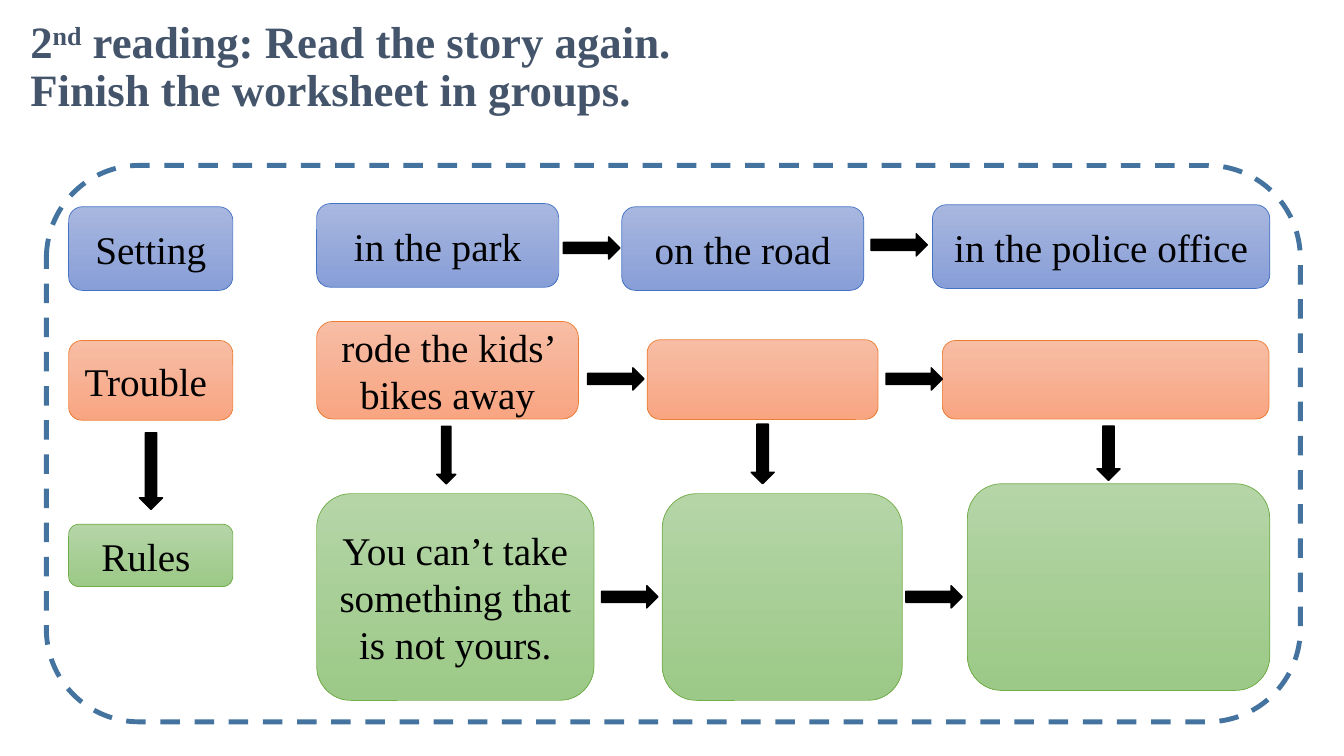
from pptx import Presentation
from pptx.dml.color import RGBColor
from pptx.enum.dml import MSO_LINE
from pptx.enum.shapes import MSO_SHAPE
from pptx.enum.text import MSO_ANCHOR, PP_ALIGN
from pptx.util import Cm, Pt

COLOURS = {
    "title": "44546A",
    "paper": "FFFFFF",
    "ink": "000000",
    "frame": "43739E",
    "setting": ("A8B7DF", "889ED7", "4472C4"),
    "trouble": ("F7BDA5", "F8A582", "ED7D31"),
    "rules": ("B5D5A7", "9CC987", "70AD47"),
}
FONT = "Times New Roman"

SETTING_CARDS = [
    ("Setting", 0, 0.08, 4.14, 2.11),
    ("in the park", 6.25, 0, 6.1, 2.11),
    ("on the road", 13.94, 0.08, 6.1, 2.11),
    ("in the police office", 21.77, 0.03, 8.5, 2.11),
]
TROUBLE_CARDS = [
    ("Trouble ", 0, 0.48, 4.14, 2.01),
    ("rode the kids’ bikes away", 6.25, 0, 6.6, 2.46),
    ("", 14.58, 0.46, 5.82, 2.01),
    ("", 22.02, 0.48, 8.23, 1.98),
]
RULES_CARDS = [
    ("Rules ", 0, 1.02, 4.14, 1.57),
    ("You can’t take something that is not yours.", 6.25, 0.25, 6.99, 5.21),
    ("", 14.96, 0.25, 6.05, 5.21),
    ("", 22.65, 0, 7.62, 5.21),
]
DOWN_ARROWS = [
    (1.11, 0.78, 1.93, 0.58),
    (8.79, 0.43, 1.45, 0.48),
    (16.74, 0.35, 1.5, 0.58),
    (25.52, 0.33, 1.37, 0.58),
]


def rgb(value):
    """Turn a hex string into a colour."""
    return RGBColor.from_string(value)


def add_outline(slide, kind, box, colour, weight):
    """Add a shadowless preset shape with a coloured line."""
    outline = slide.shapes.add_shape(kind, *map(Cm, box))
    outline.shadow.inherit = False
    outline.line.color.rgb = rgb(colour)
    outline.line.width = Pt(weight)
    return outline


def style_run(run, size, colour, bold=False):
    """Apply the slide's typeface to a run."""
    run.font.name = FONT
    run.font.size = Pt(size)
    run.font.bold = bold
    run.font.color.rgb = rgb(colour)


def add_heading(slide, box):
    """Fill the title placeholder with the two-line task."""
    heading = slide.shapes.title
    heading.left, heading.top, heading.width, heading.height = map(Cm, box)
    heading.fill.solid()
    heading.fill.fore_color.rgb = rgb(COLOURS["paper"])
    heading.text_frame.word_wrap = True
    heading.text_frame.vertical_anchor = MSO_ANCHOR.MIDDLE
    task = heading.text_frame.paragraphs[0]
    task.alignment = PP_ALIGN.LEFT
    task.line_spacing = 0.9
    task.add_run().text = "2"
    ordinal = task.add_run()
    ordinal.text = "nd"
    ordinal._r.get_or_add_rPr().set("baseline", "30000")
    task.add_run().text = " reading: Read the story again."
    task.add_line_break()
    task.add_run().text = "Finish the worksheet in groups."
    for run in task.runs:
        style_run(run, 32, COLOURS["title"], bold=True)


def add_frame(slide, box):
    """Draw the dashed border around the worksheet."""
    frame = add_outline(slide, MSO_SHAPE.ROUNDED_RECTANGLE, box, COLOURS["frame"], 3.5)
    frame.fill.background()
    frame.line.dash_style = MSO_LINE.DASH


def add_card(slide, box, wording, palette):
    """Add one gradient card, with its wording if it has any."""
    light, dark, edge = palette
    card = add_outline(slide, MSO_SHAPE.ROUNDED_RECTANGLE, box, edge, 0.5)
    card.fill.gradient()
    card.fill.gradient_angle = 270
    for stop, colour in zip(card.fill.gradient_stops, (light, dark)):
        stop.color.rgb = rgb(colour)
    if wording:
        card.text_frame.text = wording
        card.text_frame.word_wrap = True
        card.text_frame.vertical_anchor = MSO_ANCHOR.MIDDLE
        line = card.text_frame.paragraphs[0]
        line.alignment = PP_ALIGN.CENTER
        style_run(line.runs[0], 28, COLOURS["ink"])


def add_arrow(slide, box, rotation=0):
    """Add one solid block arrow."""
    arrow = add_outline(slide, MSO_SHAPE.RIGHT_ARROW, box, COLOURS["ink"], 1)
    arrow.fill.solid()
    arrow.fill.fore_color.rgb = rgb(COLOURS["ink"])
    arrow.rotation = rotation


def add_story_row(slide, origin, palette, cards, arrows):
    """Place a row of cards and the arrows between them from its top left corner."""
    left, top = origin
    for wording, x, y, width, height in cards:
        add_card(slide, (left + x, top + y, width, height), wording, palette)
    for x, y in arrows:
        add_arrow(slide, (left + x, top + y, 1.42, 0.56))


def add_down_arrows(slide, origin):
    """Place the arrows that lead from the troubles to the rules."""
    left, top = origin
    for x, y, length, thickness in DOWN_ARROWS:
        add_arrow(slide, (left + x, top + y, length, thickness), rotation=90)


def main():
    """Build the worksheet slide and save it."""
    deck = Presentation()
    deck.slide_width, deck.slide_height = Cm(33.87), Cm(19.05)
    slide = deck.slides.add_slide(deck.slide_layouts[5])
    add_story_row(slide, (1.73, 5.13), COLOURS["setting"], SETTING_CARDS,
                  [(12.47, 0.84), (20.22, 0.76)])
    add_story_row(slide, (1.73, 8.1), COLOURS["trouble"], TROUBLE_CARDS,
                  [(13.08, 1.17), (20.6, 1.17)])
    add_story_row(slide, (1.73, 12.19), COLOURS["rules"], RULES_CARDS,
                  [(13.43, 2.57), (21.1, 2.57)])
    add_down_arrows(slide, (1.73, 10.8))
    add_frame(slide, (1.17, 4.17, 31.6, 14.02))
    add_heading(slide, (0.51, 0.36, 17.25, 2.72))
    deck.save("out.pptx")


if __name__ == "__main__":
    main()
